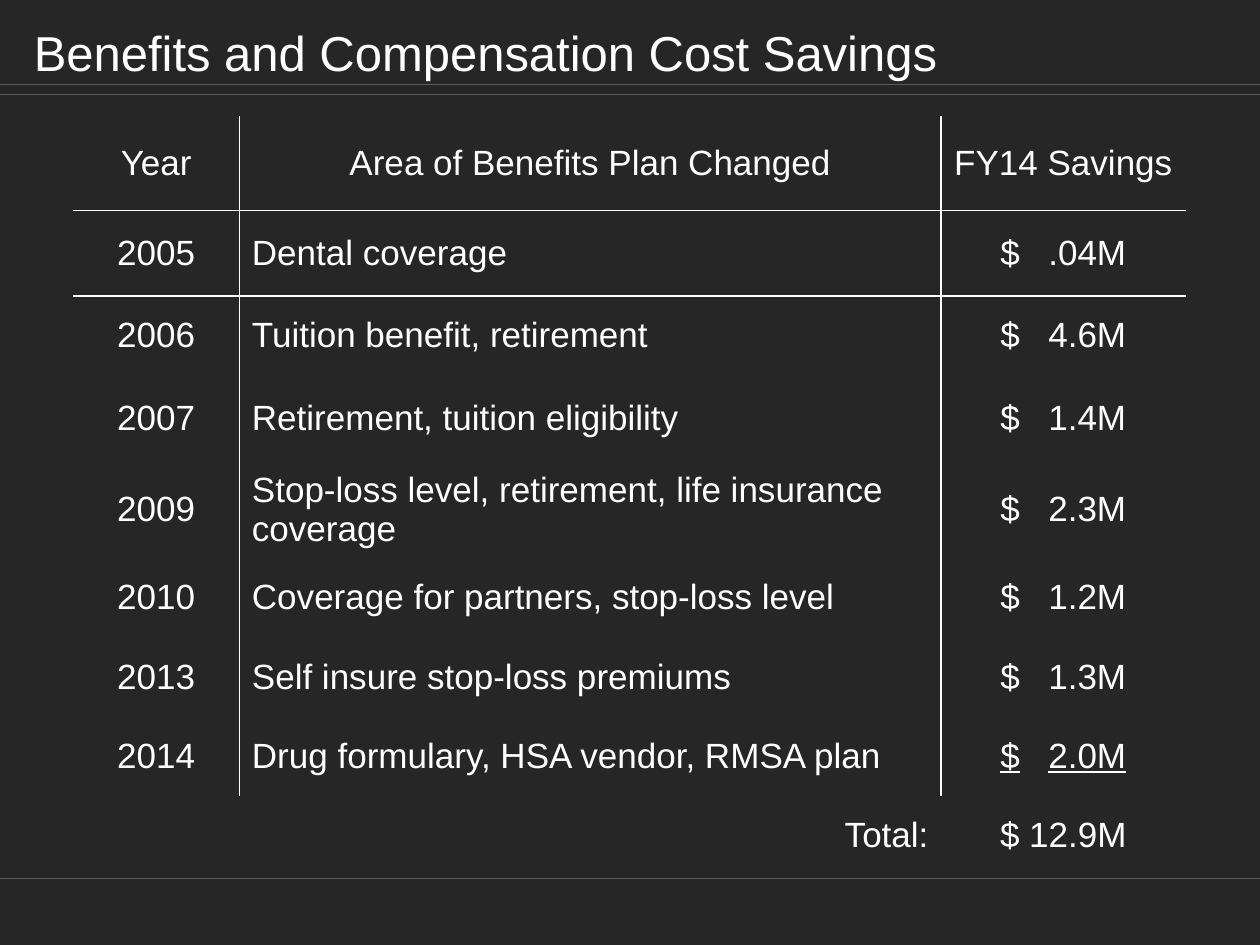
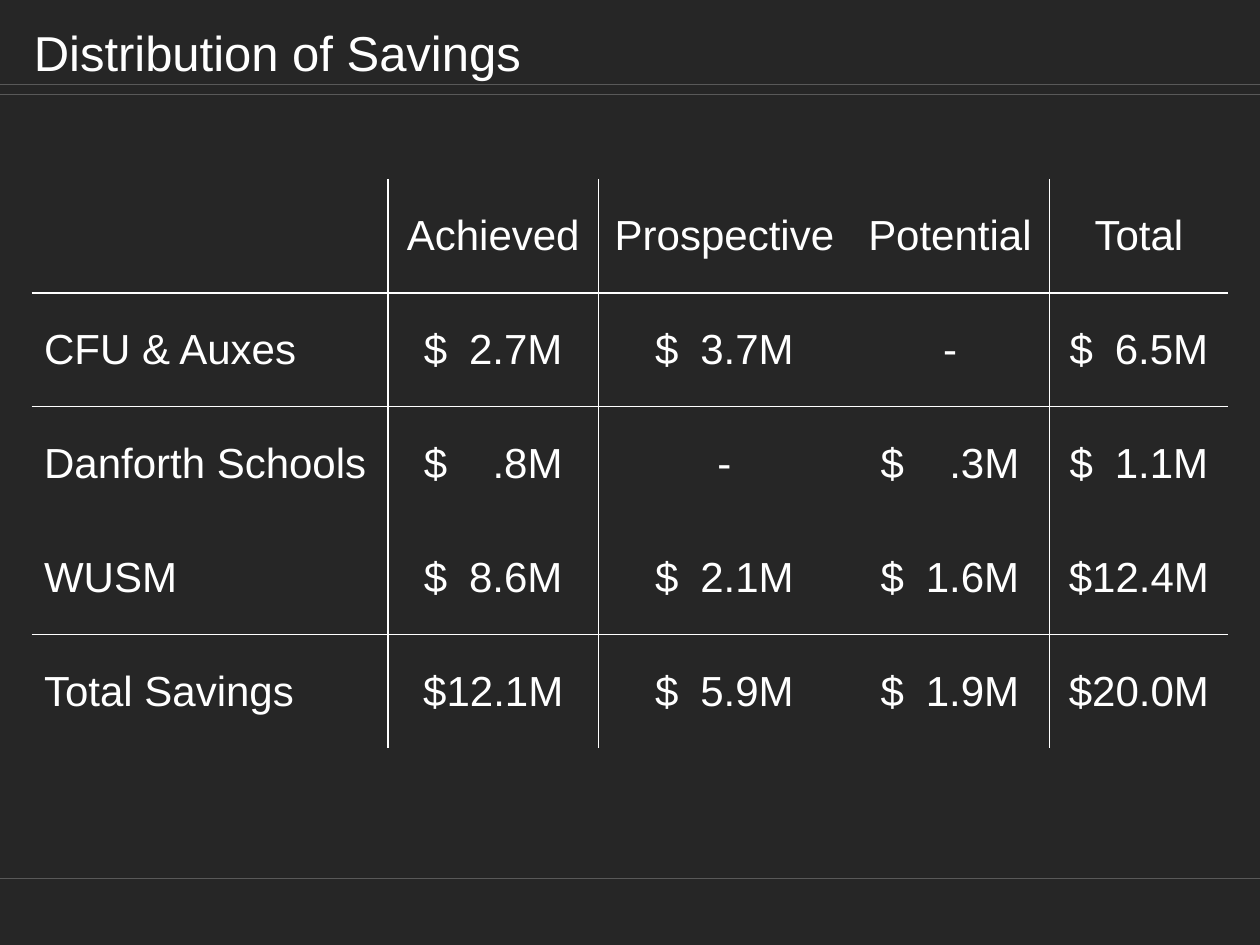
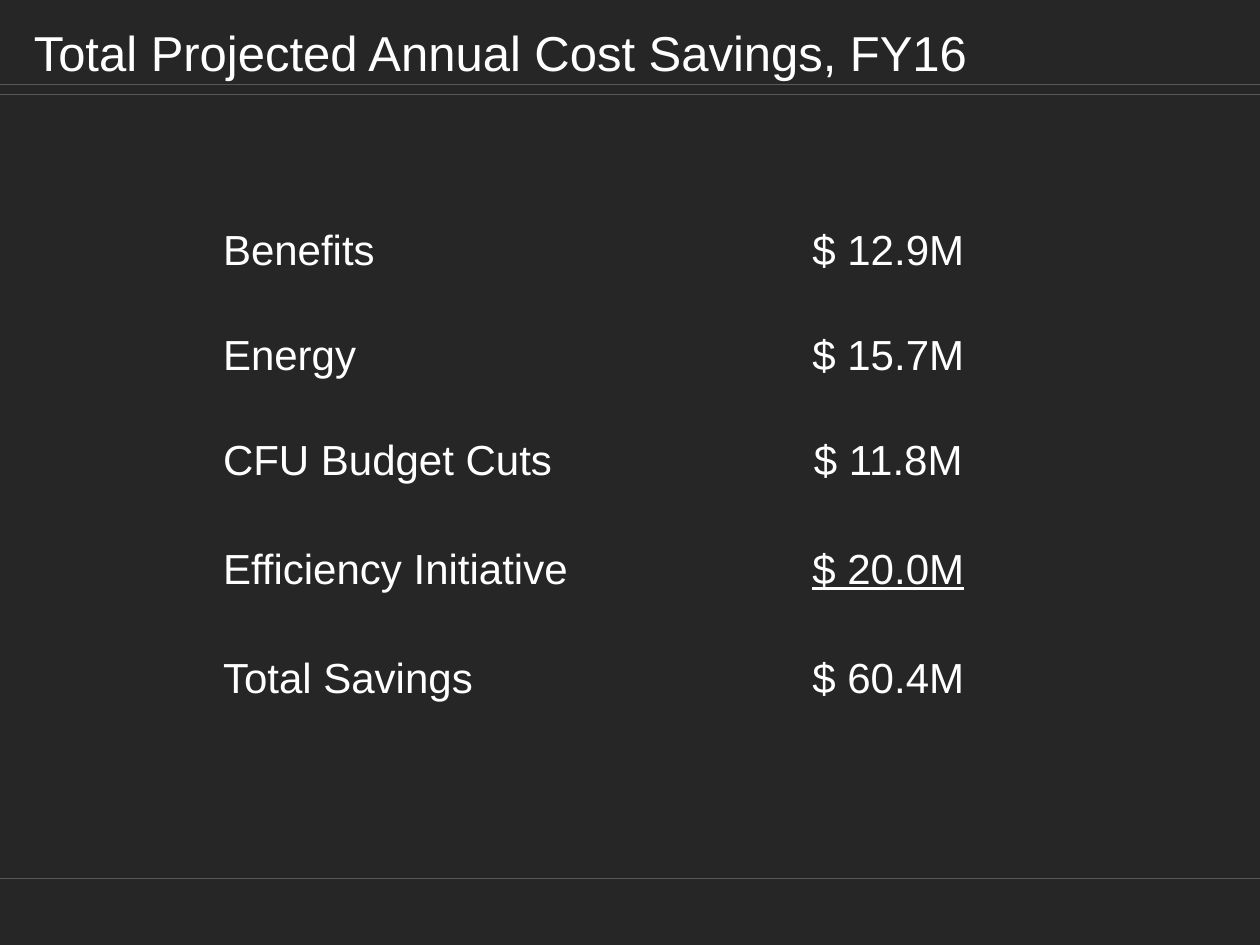
import pptx
import pptx.dml.color
import pptx.enum.shapes
import pptx.enum.text
import pptx.oxml
import pptx.oxml.ns
import pptx.util

Inches = pptx.util.Inches
Pt = pptx.util.Pt
RGBColor = pptx.dml.color.RGBColor
ALIGN = pptx.enum.text.PP_ALIGN
MIDDLE = pptx.enum.text.MSO_ANCHOR.MIDDLE

# Shared look
WIDTH, HEIGHT = 10, 7.5
BACKGROUND = RGBColor(0x26, 0x26, 0x26)
WHITE = RGBColor(0xFF, 0xFF, 0xFF)
RULE_GREY = RGBColor(0x59, 0x59, 0x59)
FONT = "Arial"
TITLE_SIZE = 28
TITLE_AREA = (0.17, 0.08, 9.75, 0.67)
RULE_TOPS = (0.67, 0.75, 6.97)

# Content: a tab in a figure separates the dollar sign from a right-aligned amount
SLIDES = [
    {
        "title": "Benefits and Compensation Cost Savings",
        "at": (0.58, 0.92), "size": 20, "figure_width": 1.0,
        "columns": [1.32, 5.57, 1.94],
        "heights": [0.75, 0.68, 0.63, 0.68, 0.72, 0.63, 0.63, 0.63, 0.63],
        "aligns": "clc", "heading": True,
        "lines_after_columns": {0, 1}, "lines_after_rows": {0, 1},
        "underlined_row": 7, "total_spans": True,
        "rows": [
            ["Year", "Area of Benefits Plan Changed", "FY14 Savings"],
            ["2005", "Dental coverage", "$\t.04M"],
            ["2006", "Tuition benefit, retirement", "$\t4.6M"],
            ["2007", "Retirement, tuition eligibility", "$\t1.4M"],
            ["2009", "Stop-loss level, retirement, life insurance coverage", "$\t2.3M"],
            ["2010", "Coverage for partners, stop-loss level", "$\t1.2M"],
            ["2013", "Self insure stop-loss premiums", "$\t1.3M"],
            ["2014", "Drug formulary, HSA vendor, RMSA plan", "$\t2.0M"],
            ["Total:", "", "$ 12.9M"],
        ],
    },
    {
        "title": "Distribution of Savings",
        "at": (0.25, 1.42), "size": 24, "figure_width": 1.1,
        "columns": [2.83, 1.67, 2, 1.58, 1.42],
        "heights": [4.52 / 5] * 5,
        "aligns": "lcccc", "heading": True,
        "lines_after_columns": {0, 1, 3}, "lines_after_rows": {0, 1, 3},
        "rows": [
            ["", "Achieved", "Prospective", "Potential", "Total"],
            ["CFU & Auxes", "$\t2.7M", "$\t3.7M", "-", "$\t6.5M"],
            ["Danforth Schools", "$\t.8M", "-", "$\t.3M", "$\t1.1M"],
            ["WUSM", "$\t8.6M", "$\t2.1M", "$\t1.6M", "$12.4M"],
            ["Total Savings", "$12.1M", "$\t5.9M", "$\t1.9M", "$20.0M"],
        ],
    },
    {
        "title": "Total Projected Annual Cost Savings, FY16",
        "at": (1.67, 1.58), "size": 24,
        "columns": [4.17, 2.42],
        "heights": [0.83, 0.83, 0.83, 0.9, 0.83],
        "aligns": "lc", "underlined_row": 3,
        "rows": [
            ["Benefits", "$ 12.9M"],
            ["Energy", "$ 15.7M"],
            ["CFU Budget Cuts", "$ 11.8M"],
            ["Efficiency Initiative", "$ 20.0M"],
            ["Total Savings", "$ 60.4M"],
        ],
    },
]


def write(para, text, size, **extra):
    span = para.add_run()
    span.text = text
    for name, value in {"name": FONT, "size": Pt(size), **extra}.items():
        setattr(span.font, name, value)
    span.font.color.rgb = WHITE


def add_frame(page, title):
    """Title and the horizontal rules found on every slide."""
    for top in RULE_TOPS:
        rule = page.shapes.add_connector(
            pptx.enum.shapes.MSO_CONNECTOR.STRAIGHT,
            0, Inches(top), Inches(WIDTH), Inches(top))
        rule.line.color.rgb = RULE_GREY
        rule.line.width = Pt(0.25)
        pptx.oxml.ns  # namespace map used below
        rule._element.spPr.append(pptx.oxml.parse_xml(
            f'<a:effectLst {pptx.oxml.ns.nsdecls("a")}/>'))
    box = page.shapes.add_textbox(*map(Inches, TITLE_AREA))
    box.text_frame.word_wrap = True
    box.text_frame.vertical_anchor = MIDDLE
    write(box.text_frame.paragraphs[0], title, TITLE_SIZE)


def set_borders(cell, sides):
    """Draw each side of the cell that is marked true and clear the others."""
    properties = cell._tc.get_or_add_tcPr()
    for index, (side, shown) in enumerate(sides.items()):
        paint = (f'<a:solidFill><a:srgbClr val="{WHITE}"/></a:solidFill>'
                 if shown else "<a:noFill/>")
        properties.insert(index, pptx.oxml.parse_xml(
            f'<a:ln{side} {pptx.oxml.ns.nsdecls("a")} w="{Pt(1)}">{paint}</a:ln{side}>'))


def align_figure(cell, para, column_width, figure_width):
    """Centre a block of figure_width, with the amount flush at its right edge."""
    cell.margin_left = Inches((column_width - figure_width) / 2)
    cell.margin_right = Inches(0.05)
    para.alignment = ALIGN.LEFT
    para._p.get_or_add_pPr().append(pptx.oxml.parse_xml(
        f'<a:tabLst {pptx.oxml.ns.nsdecls("a")}>'
        f'<a:tab pos="{Inches(figure_width)}" algn="r"/></a:tabLst>'))


def add_savings_table(page, spec_of):
    rows, columns, heights = spec_of["rows"], spec_of["columns"], spec_of["heights"]
    after_columns = spec_of.get("lines_after_columns", set())
    after_rows = spec_of.get("lines_after_rows", set())
    last = len(rows) - 1
    spans = spec_of.get("total_spans", False)
    area = (*spec_of["at"], sum(columns), sum(heights))
    table = page.shapes.add_table(
        len(rows), len(columns), *map(Inches, area)).table
    table.first_row = table.horz_banding = False
    for column, width in zip(table.columns, columns):
        column.width = Inches(width)
    for row, height in zip(table.rows, heights):
        row.height = Inches(height)

    for r, texts in enumerate(rows):
        total = spans and r == last
        for c, text in enumerate(texts):
            cell = table.cell(r, c)
            cell.fill.background()
            cell.vertical_anchor = MIDDLE
            set_borders(cell, {
                "L": c - 1 in after_columns and not total,
                "R": c in after_columns and not total,
                "T": r - 1 in after_rows,
                "B": r in after_rows,
            })
            if not text:
                continue
            para = cell.text_frame.paragraphs[0]
            heading = r == 0 and spec_of.get("heading", False)
            centred = heading or spec_of["aligns"][c] == "c"
            para.alignment = ALIGN.CENTER if centred else ALIGN.LEFT
            if total and c == 0:
                para.alignment = ALIGN.RIGHT
            if "\t" in text:
                align_figure(cell, para, columns[c], spec_of["figure_width"])
            underlined = r == spec_of.get("underlined_row") and c == len(columns) - 1
            write(para, text, spec_of["size"], **({"underline": True} if underlined else {}))
    if spans:
        table.cell(last, 0).merge(table.cell(last, 1))


def main():
    deck = pptx.Presentation()
    deck.slide_width, deck.slide_height = Inches(WIDTH), Inches(HEIGHT)
    backdrop = deck.slide_master.background.fill
    backdrop.solid()
    backdrop.fore_color.rgb = BACKGROUND
    for content in SLIDES:
        page = deck.slides.add_slide(deck.slide_layouts[6])
        add_frame(page, content["title"])
        add_savings_table(page, content)
    deck.save("out.pptx")


if __name__ == "__main__":
    main()
